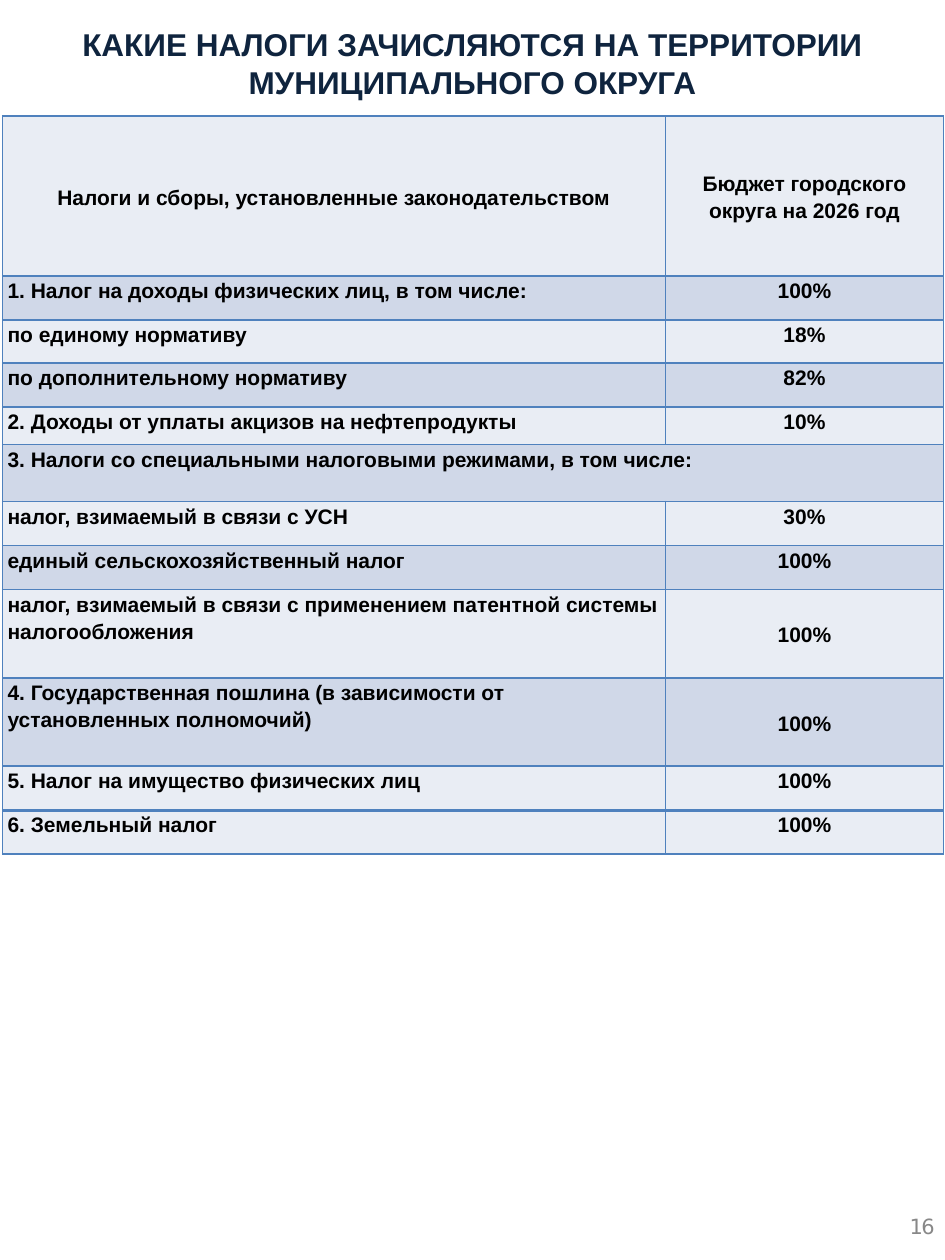
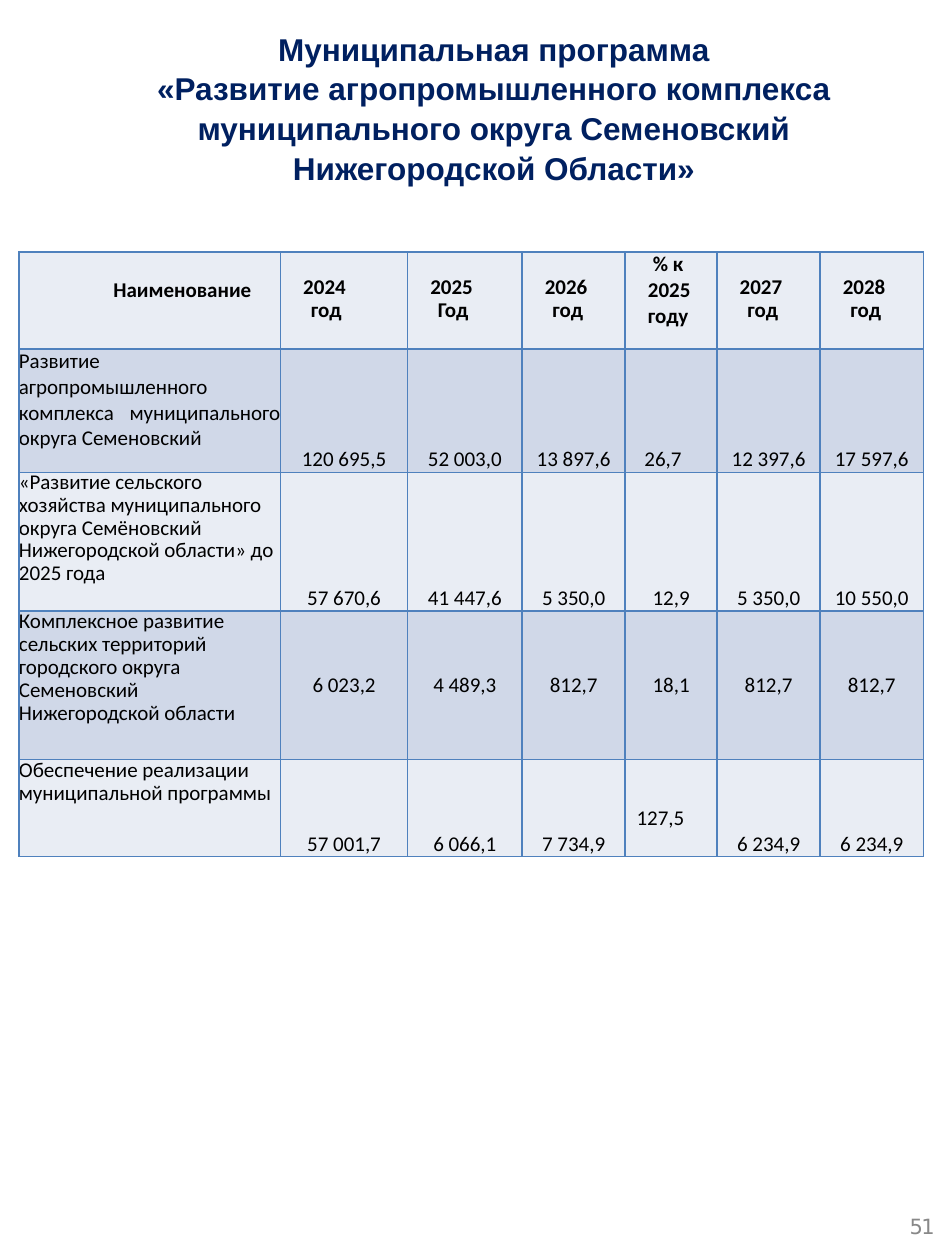
from dataclasses import dataclass, replace
from itertools import accumulate
from typing import Optional, Sequence, Union

from lxml import etree
from pptx import Presentation
from pptx import util as u
from pptx.dml.color import RGBColor
from pptx.enum import text
from pptx.oxml import ns

SLIDE_WIDTH, SLIDE_HEIGHT = u.Inches(7.5), u.Inches(10)
LIGHT_ROW, DARK_ROW, GRID_LINE = "E9EDF4", "D0D8E8", "4F81BD"
BLACK, PAGE_GREY, NAVY, ROYAL = "000000", "888888", "0F243E", "002060"

LEFT, CENTER, JUSTIFY = text.PP_ALIGN.LEFT, text.PP_ALIGN.CENTER, text.PP_ALIGN.JUSTIFY
TOP, MIDDLE, BOTTOM = text.MSO_ANCHOR.TOP, text.MSO_ANCHOR.MIDDLE, text.MSO_ANCHOR.BOTTOM


@dataclass(frozen=True)
class Area:
    """Percentages of the slide's width and height."""
    left: float
    top: float
    width: float
    height: float

    def lengths(self) -> tuple[int, int, int, int]:
        return (round(SLIDE_WIDTH * self.left / 100), round(SLIDE_HEIGHT * self.top / 100),
                round(SLIDE_WIDTH * self.width / 100), round(SLIDE_HEIGHT * self.height / 100))


@dataclass(frozen=True)
class Style:
    font: str
    size: float
    color: str = BLACK
    bold: bool = False
    align: text.PP_ALIGN = LEFT
    line_spacing: Optional[Union[float, u.Pt]] = None
    letter_spacing: float = 0


@dataclass(frozen=True)
class Margins:
    left: float = 0
    top: float = 0
    right: float = 0
    bottom: float = 0


@dataclass(frozen=True)
class Cell:
    content: str
    style: Style
    anchor: text.MSO_ANCHOR = TOP
    margins: Margins = Margins()
    indents: tuple[float, ...] = ()


@dataclass(frozen=True)
class Row:
    height: float
    cells: Sequence[Cell]
    fill: str
    top_line: float = 1


def rgb(color: str) -> RGBColor:
    return RGBColor.from_string(color)


def set_margins(holder, margins: Margins) -> None:
    holder.margin_left = u.Inches(margins.left)
    holder.margin_top = u.Inches(margins.top)
    holder.margin_right = u.Inches(margins.right)
    holder.margin_bottom = u.Inches(margins.bottom)


def write(frame, content: str, style: Style) -> None:
    frame.text = content
    for paragraph in frame.paragraphs:
        paragraph.alignment = style.align
        if style.line_spacing:
            paragraph.line_spacing = style.line_spacing
        for run in paragraph.runs:
            run.font.name = style.font
            run.font.size = u.Pt(style.size)
            run.font.bold = style.bold
            run.font.color.rgb = rgb(style.color)
            if style.letter_spacing:
                run.font._element.set("spc", str(round(style.letter_spacing * 100)))


def add_label(slide, area: Area, content: str, style: Style, margins: Margins) -> None:
    frame = slide.shapes.add_textbox(*area.lengths()).text_frame
    frame.word_wrap = True
    set_margins(frame, margins)
    write(frame, content, style)


def add_border(cell, side: str, width: float) -> None:
    line = etree.SubElement(cell._tc.get_or_add_tcPr(), ns.qn(f"a:ln{side}"),
                            w=str(u.Pt(width)))
    fill = etree.SubElement(line, ns.qn("a:solidFill"))
    etree.SubElement(fill, ns.qn("a:srgbClr"), val=GRID_LINE)


def share_out(total: int, weights: Sequence[float]) -> list[int]:
    edges = [round(total * edge / sum(weights)) for edge in accumulate(weights, initial=0)]
    return [end - start for start, end in zip(edges, edges[1:])]


def add_grid(slide, area: Area, columns: Sequence[float], rows: Sequence[Row]) -> None:
    left, top, width, height = area.lengths()
    table = slide.shapes.add_table(len(rows), len(columns), left, top, width, height).table
    table.first_row = table.horz_banding = False
    for column, size in zip(table.columns, share_out(width, columns)):
        column.width = size
    for line, size in zip(table.rows, share_out(height, [row.height for row in rows])):
        line.height = size
    for index, row in enumerate(rows):
        for position in range(len(columns)):
            place = table.cell(index, position)
            for side in "LRTB":
                add_border(place, side, row.top_line if side == "T" else 1)
            place.fill.solid()
            place.fill.fore_color.rgb = rgb(row.fill)
        for position, cell in enumerate(row.cells):
            place = table.cell(index, position)
            place.vertical_anchor = cell.anchor
            set_margins(place, cell.margins)
            write(place.text_frame, cell.content, cell.style)
            for paragraph, indent in zip(place.text_frame.paragraphs, cell.indents):
                paragraph._p.get_or_add_pPr().set("indent", str(u.Inches(indent)))
        if len(row.cells) < len(columns):
            table.cell(index, len(row.cells) - 1).merge(table.cell(index, len(columns) - 1))


def stripe(index: int) -> str:
    return DARK_ROW if index % 2 else LIGHT_ROW


TITLE = Style("Arial", 18, NAVY, True, CENTER, 1.02)
PAGE_NUMBER = Style("DejaVu Sans", 12, PAGE_GREY, letter_spacing=-1)
PAGE_AREA = Area(95.47, 96.1, 4.13, 2.5)


def add_page_number(slide, number: int) -> None:
    add_label(slide, PAGE_AREA, str(number), PAGE_NUMBER, Margins(left=0.06, top=0.02))


TAX_NAME = Style("Arial", 12, bold=True, line_spacing=1.15)
TAX_SHARE = replace(TAX_NAME, align=CENTER)
TAX_MARGINS = Margins(left=0.04, right=0.04)
TAXES = [
    (35, "1. Налог на доходы физических лиц, в том числе:", "100%"),
    (34, "по единому нормативу", "18%"),
    (35, "по дополнительному нормативу", "82%"),
    (30, "2. Доходы от уплаты акцизов на нефтепродукты", "10%"),
    (45, "3. Налоги со специальными налоговыми режимами, в том числе:", ""),
    (35, "налог, взимаемый в связи с УСН", "30%"),
    (35, "единый сельскохозяйственный налог", "100%"),
    (70, "налог, взимаемый в связи с применением патентной системы налогообложения", "100%"),
    (70, "4. Государственная пошлина (в зависимости от\nустановленных полномочий)", "100%"),
    (35, "5. Налог на имущество физических лиц", "100%"),
    (35, "6. Земельный налог", "100%"),
]


def tax_rows() -> list[Row]:
    headings = ("Налоги и сборы, установленные законодательством",
                "Бюджет городского округа на 2026 год")
    rows = [Row(127, [Cell(heading, TAX_SHARE, MIDDLE, TAX_MARGINS) for heading in headings],
                LIGHT_ROW)]
    for index, (height, name, share) in enumerate(TAXES, 1):
        cells = [Cell(name, TAX_NAME, TOP, TAX_MARGINS)]
        if share:
            anchor = MIDDLE if height == 70 else TOP
            cells.append(Cell(share, TAX_SHARE, anchor, TAX_MARGINS))
        rows.append(Row(height, cells, stripe(index)))
    rows[-1] = replace(rows[-1], fill=LIGHT_ROW, top_line=2)
    return rows


def build_taxes(slide) -> None:
    add_label(slide, Area(3.73, 1.7, 92.53, 11.1),
              "КАКИЕ НАЛОГИ ЗАЧИСЛЯЮТСЯ НА ТЕРРИТОРИИ МУНИЦИПАЛЬНОГО ОКРУГА",
              TITLE, Margins(top=0.02))
    add_grid(slide, Area(0.27, 9.2, 99.6, 58.6), (526, 221), tax_rows())
    add_page_number(slide, 16)


BODY = Style("Calibri", 12)
HEADING = replace(BODY, bold=True)
YEAR = replace(HEADING, line_spacing=u.Pt(13.2))
FIGURE = replace(BODY, align=CENTER)
TIGHT = replace(BODY, line_spacing=u.Pt(13.2))
PROGRAMMES = [
    (98, "Развитие агропромышленного комплекса муниципального округа Семеновский",
     replace(BODY, align=JUSTIFY), BOTTOM,
     ("120 695,5", "52 003,0", "13 897,6", "26,7", "12 397,6", "17 597,6")),
    (110, "«Развитие сельского хозяйства муниципального округа Семёновский "
     "Нижегородской области» до 2025 года", replace(BODY, line_spacing=u.Pt(13)), BOTTOM,
     ("57 670,6", "41 447,6", "5 350,0", "12,9", "5 350,0", "10 550,0")),
    (118, "Комплексное развитие сельских территорий городского округа Семеновский "
     "Нижегородской области", TIGHT, MIDDLE,
     ("6 023,2", "4 489,3", "812,7", "18,1", "812,7", "812,7")),
    (77, "Обеспечение реализации муниципальной программы", TIGHT, BOTTOM,
     ("57 001,7", "6 066,1", "7 734,9", "127,5", "6 234,9", "6 234,9")),
]
SHIFTED_FIGURES = {"26,7": Margins(right=0.13), "127,5": Margins(right=0.17, bottom=0.2)}


def year_heading(year: str) -> Cell:
    return Cell(year, YEAR, TOP, Margins(left=0.18, top=0.2), (0, 0.06))


def programme_rows() -> list[Row]:
    headings = [Cell("Наименование", HEADING, TOP, Margins(left=0.75, top=0.2))]
    headings += [year_heading(year) for year in ("2024\nгод", "2025\nГод", "2026\nгод")]
    headings.append(Cell("% к 2025 году", HEADING, TOP, Margins(left=0.18), (0.04,)))
    headings += [year_heading(year) for year in ("2027\nгод", "2028\nгод")]
    rows = [Row(77, headings, LIGHT_ROW)]
    for index, (height, name, style, anchor, figures) in enumerate(PROGRAMMES, 1):
        cells = [Cell(name, style)]
        cells += [Cell(figure, FIGURE, anchor, SHIFTED_FIGURES.get(figure, Margins()))
                  for figure in figures]
        rows.append(Row(height, cells, stripe(index)))
    return rows


def build_programme(slide) -> None:
    add_grid(slide, Area(2, 20, 95.73, 48), (208, 101, 91, 82, 73, 82, 82), programme_rows())
    add_label(slide, Area(4.53, 1.7, 95.47, 13.1),
              "Муниципальная программа\v«Развитие агропромышленного комплекса "
              "муниципального округа Семеновский\nНижегородской Области»",
              replace(TITLE, color=ROYAL, line_spacing=1.05), Margins(0.1, 0.05, 0.1, 0.05))
    add_page_number(slide, 51)


def main() -> None:
    deck = Presentation()
    deck.slide_width, deck.slide_height = SLIDE_WIDTH, SLIDE_HEIGHT
    for build in (build_taxes, build_programme):
        build(deck.slides.add_slide(deck.slide_layouts[6]))
    deck.save("out.pptx")


if __name__ == "__main__":
    main()
